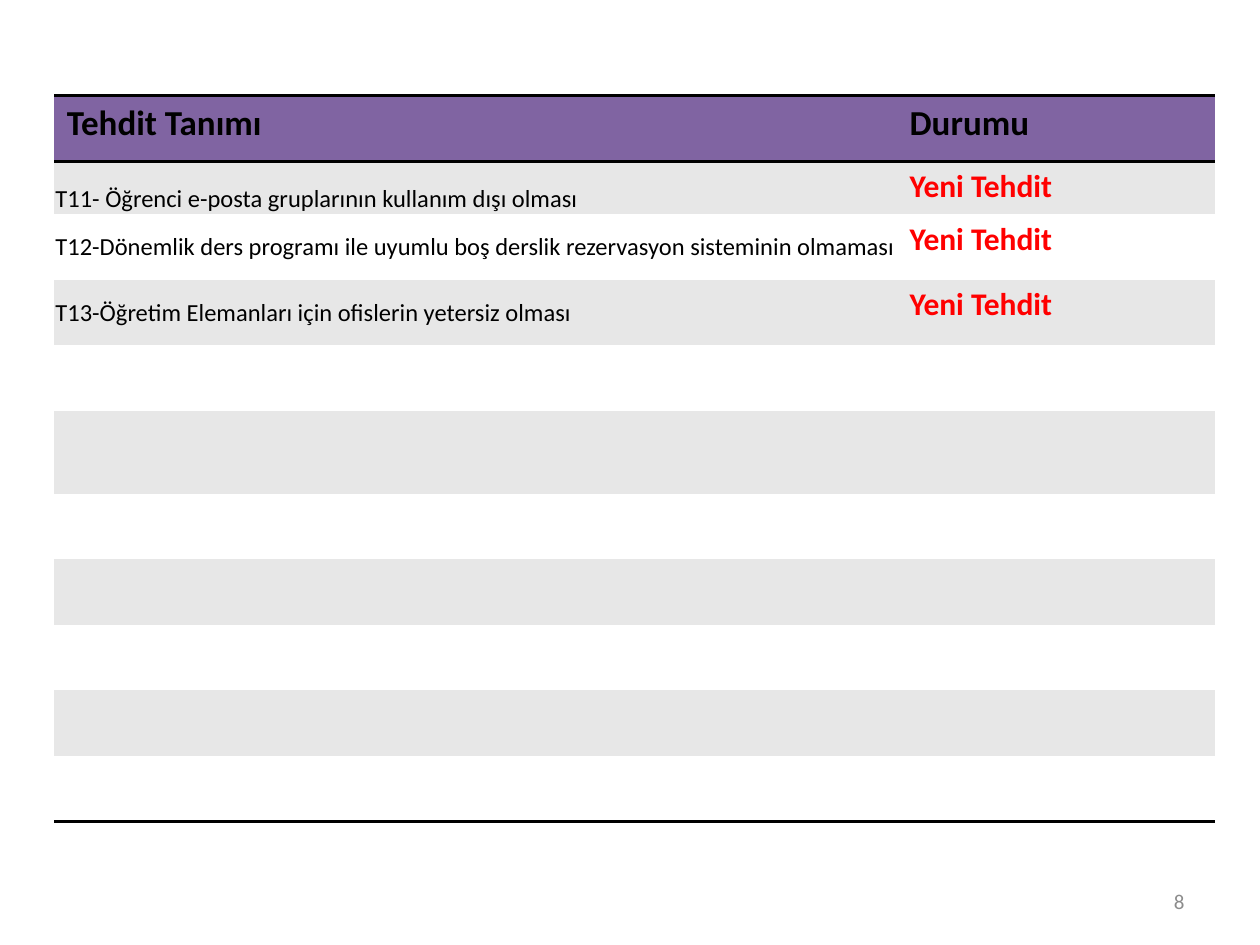
import pptx
import pptx.util
import pptx.dml.color
import pptx.enum.text
import lxml.etree
import pptx.oxml.ns

Inches, Pt = pptx.util.Inches, pptx.util.Pt
RGBColor = pptx.dml.color.RGBColor
ANCHOR = pptx.enum.text.MSO_ANCHOR

# Content
HEADERS = ("Tehdit Tanımı", "Durumu")
THREATS = [
    ("T11- Öğrenci e-posta gruplarının kullanım dışı olması", ANCHOR.BOTTOM),
    ("T12-Dönemlik ders programı ile uyumlu boş derslik rezervasyon sisteminin olmaması",
     ANCHOR.MIDDLE),
    ("T13-Öğretim Elemanları için ofislerin yetersiz olması", ANCHOR.MIDDLE),
]
STATUS = "Yeni Tehdit"
PAGE = "8"

# Layout and colours
COL_WIDTHS = (6.69, 2.52)
ROW_COUNT, ROW_HEIGHT = 11, 0.52
SPECIAL_HEIGHTS = {1: 0.42, 5: 0.66}
FONT = "Calibri"
BLACK = RGBColor(0, 0, 0)
WHITE = RGBColor(0xFF, 0xFF, 0xFF)
RED = RGBColor(0xFF, 0, 0)
PURPLE = RGBColor(0x80, 0x64, 0xA2)
BAND = RGBColor(0xE7, 0xE7, 0xE7)
GRAY = RGBColor(0x8C, 0x8C, 0x8C)
NO_STYLE = "{2D5ABB26-0587-4C30-8999-92F81FD0307C}"


def add_text(tf, text, size, color, bold=False):
    p = tf.paragraphs[0]
    r = p.add_run()
    r.text = text
    r.font.name, r.font.size = FONT, Pt(size)
    r.font.bold, r.font.color.rgb = bold, color
    return p


def add_border(cell, side):
    tcPr = cell._tc.get_or_add_tcPr()
    ln = lxml.etree.SubElement(tcPr, pptx.oxml.ns.qn("a:ln" + side), w=str(Pt(2)))
    fill = lxml.etree.SubElement(ln, pptx.oxml.ns.qn("a:solidFill"))
    lxml.etree.SubElement(fill, pptx.oxml.ns.qn("a:srgbClr"), val=str(BLACK))


prs = pptx.Presentation()
prs.slide_width, prs.slide_height = Inches(10), Inches(7.5)
s = prs.slides.add_slide(prs.slide_layouts[6])

# Table grid
heights = [SPECIAL_HEIGHTS.get(i, ROW_HEIGHT) for i in range(ROW_COUNT)]
frame = s.shapes.add_table(ROW_COUNT, len(COL_WIDTHS), Inches(0.43), Inches(0.76),
                           Inches(sum(COL_WIDTHS)), Inches(sum(heights)))
table = frame.table
table._tbl.tblPr.find(pptx.oxml.ns.qn("a:tableStyleId")).text = NO_STYLE
table.horz_banding = False
for col, width in zip(table.columns, COL_WIDTHS):
    col.width = Inches(width)
for row, height in zip(table.rows, heights):
    row.height = Inches(height)

# Borders and fills
for i, row in enumerate(table.rows):
    for cell in row.cells:
        if i == 0:
            add_border(cell, "T")
        if i in (0, ROW_COUNT - 1):
            add_border(cell, "B")
        cell.fill.solid()
        cell.fill.fore_color.rgb = PURPLE if i == 0 else BAND if i % 2 else WHITE

# Table text
for j, header in enumerate(HEADERS):
    add_text(table.cell(0, j).text_frame, header, 20, BLACK, True)
for i, (threat, anchor) in enumerate(THREATS, 1):
    cell = table.cell(i, 0)
    cell.margin_left = cell.margin_right = cell.margin_top = Inches(0.01)
    cell.margin_bottom = 0
    cell.vertical_anchor = anchor
    add_text(cell.text_frame, threat, 14, BLACK)
    add_text(table.cell(i, 1).text_frame, STATUS, 18, RED, True)

# Page number
tf = s.shapes.add_textbox(Inches(7.17), Inches(6.95), Inches(2.33), Inches(0.4)).text_frame
tf.word_wrap = True
tf.vertical_anchor = ANCHOR.MIDDLE
p = add_text(tf, PAGE, 12, GRAY)
p.alignment = pptx.enum.text.PP_ALIGN.RIGHT

prs.save("out.pptx")
